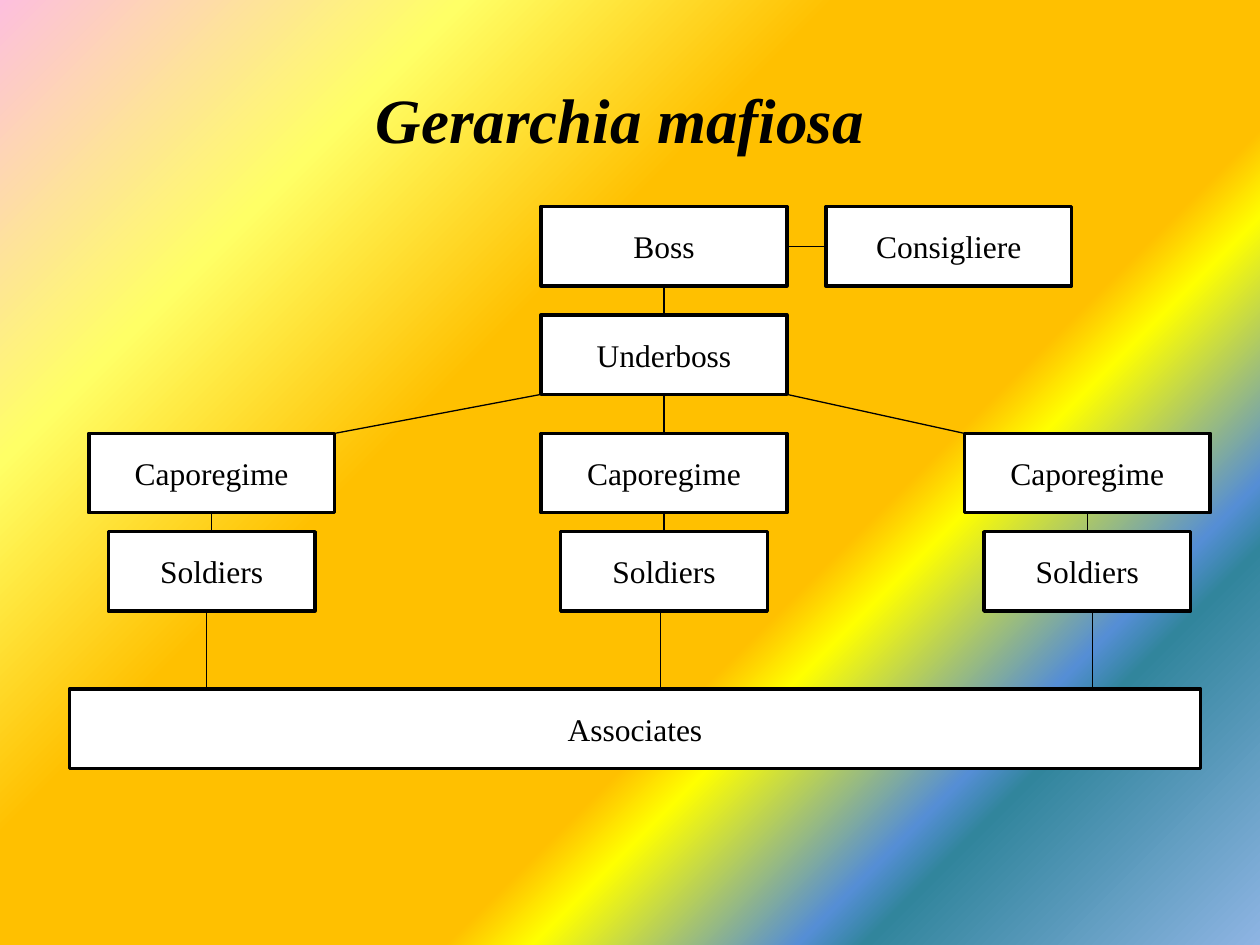
"""Build a one-slide chart of a mafia family's ranks."""
from lxml import etree
from pptx import Presentation
from pptx import util as u
from pptx.dml.color import RGBColor
from pptx.enum import shapes, text
from pptx.oxml.ns import qn

THEME = {
    "font": "Times New Roman", "ink": "000000", "paper": "FFFFFF",
    "title": 36, "label": 18, "border": 2, "link": 0.75, "angle": 315,
    "gradient": [(0, "FDBFDD"), (21, "FFFF66"), (38, "FFC000"), (63, "FFC000"),
                 (67, "FFFF00"), (79, "558ED5"), (82, "31859C"), (100, "8EB4E3")],
}
TITLE = "Gerarchia mafiosa"
TITLE_AREA = (2.34, 0.39, 5.16, 1.09)
BRANCH_CENTERS = (1.68, 5.27, 8.63)
DROPS = (1.64, 5.24, 8.67)
MIDDLE = BRANCH_CENTERS[1]
HEIGHT, WIDE, NARROW, FULL = 0.63, 1.95, 1.64, 8.98
RANKS = [
    ("Boss", 1.64, WIDE, [MIDDLE]),
    ("Consigliere", 1.64, WIDE, [7.53]),
    ("Underboss", 2.5, WIDE, [MIDDLE]),
    ("Caporegime", 3.44, WIDE, BRANCH_CENTERS),
    ("Soldiers", 4.22, NARROW, BRANCH_CENTERS),
    ("Associates", 5.47, FULL, [5.04]),
]
TOPS = {label: top for label, top, _, _ in RANKS}


def color(value):
    return RGBColor.from_string(value)


def style_text(frame, wording, size, bold=False, italic=False):
    frame.text = wording
    frame.word_wrap = True
    frame.vertical_anchor = text.MSO_ANCHOR.MIDDLE
    para = frame.paragraphs[0]
    para.alignment = text.PP_ALIGN.CENTER
    font = para.font
    font.name, font.size = THEME["font"], u.Pt(size)
    font.bold, font.italic = bold, italic
    font.color.rgb = color(THEME["ink"])


def style_line(line, width):
    line.color.rgb = color(THEME["ink"])
    line.width = u.Pt(width)


def paint_background(slide):
    fill = slide.background.fill
    fill.gradient()
    fill.gradient_angle = THEME["angle"]
    stops = slide.element.find(".//" + qn("a:gsLst"))
    for stop in list(stops):
        stops.remove(stop)
    for percent, value in THEME["gradient"]:
        stop = etree.SubElement(stops, qn("a:gs"), pos=str(percent * 1000))
        etree.SubElement(stop, qn("a:srgbClr"), val=value)


def add_box(slide, label, center, top, width):
    area = (center - width / 2, top, width, HEIGHT)
    box = slide.shapes.add_shape(shapes.MSO_SHAPE.RECTANGLE, *map(u.Inches, area))
    box.shadow.inherit = False
    box.fill.solid()
    box.fill.fore_color.rgb = color(THEME["paper"])
    style_line(box.line, THEME["border"])
    style_text(box.text_frame, label, THEME["label"])


def add_link(slide, *ends):
    link = slide.shapes.add_connector(
        shapes.MSO_CONNECTOR.STRAIGHT, *map(u.Inches, ends))
    style_line(link.line, THEME["link"])
    etree.SubElement(link.element.spPr, qn("a:effectLst"))


def add_drop(slide, x, upper, lower):
    add_link(slide, x, TOPS[upper] + HEIGHT, x, TOPS[lower])


def add_links(slide):
    half = WIDE / 2
    level = TOPS["Boss"] + HEIGHT / 2
    add_link(slide, MIDDLE + half, level, 7.53 - half, level)
    add_drop(slide, MIDDLE, "Boss", "Underboss")
    add_drop(slide, MIDDLE, "Underboss", "Caporegime")
    for center, side in ((BRANCH_CENTERS[0], -half), (BRANCH_CENTERS[2], half)):
        add_link(slide, MIDDLE + side, TOPS["Underboss"] + HEIGHT,
                 center - side, TOPS["Caporegime"])
    for center, drop in zip(BRANCH_CENTERS, DROPS):
        add_drop(slide, center, "Caporegime", "Soldiers")
        add_drop(slide, drop, "Soldiers", "Associates")


def main():
    deck = Presentation()
    deck.slide_width, deck.slide_height = u.Inches(10), u.Inches(7.5)
    slide = deck.slides.add_slide(deck.slide_layouts[5])
    paint_background(slide)
    title = slide.shapes.title
    title.left, title.top, title.width, title.height = map(u.Inches, TITLE_AREA)
    style_text(title.text_frame, TITLE, THEME["title"], bold=True, italic=True)
    for label, top, width, centers in RANKS:
        for center in centers:
            add_box(slide, label, center, top, width)
    add_links(slide)
    deck.save("out.pptx")


if __name__ == "__main__":
    main()
